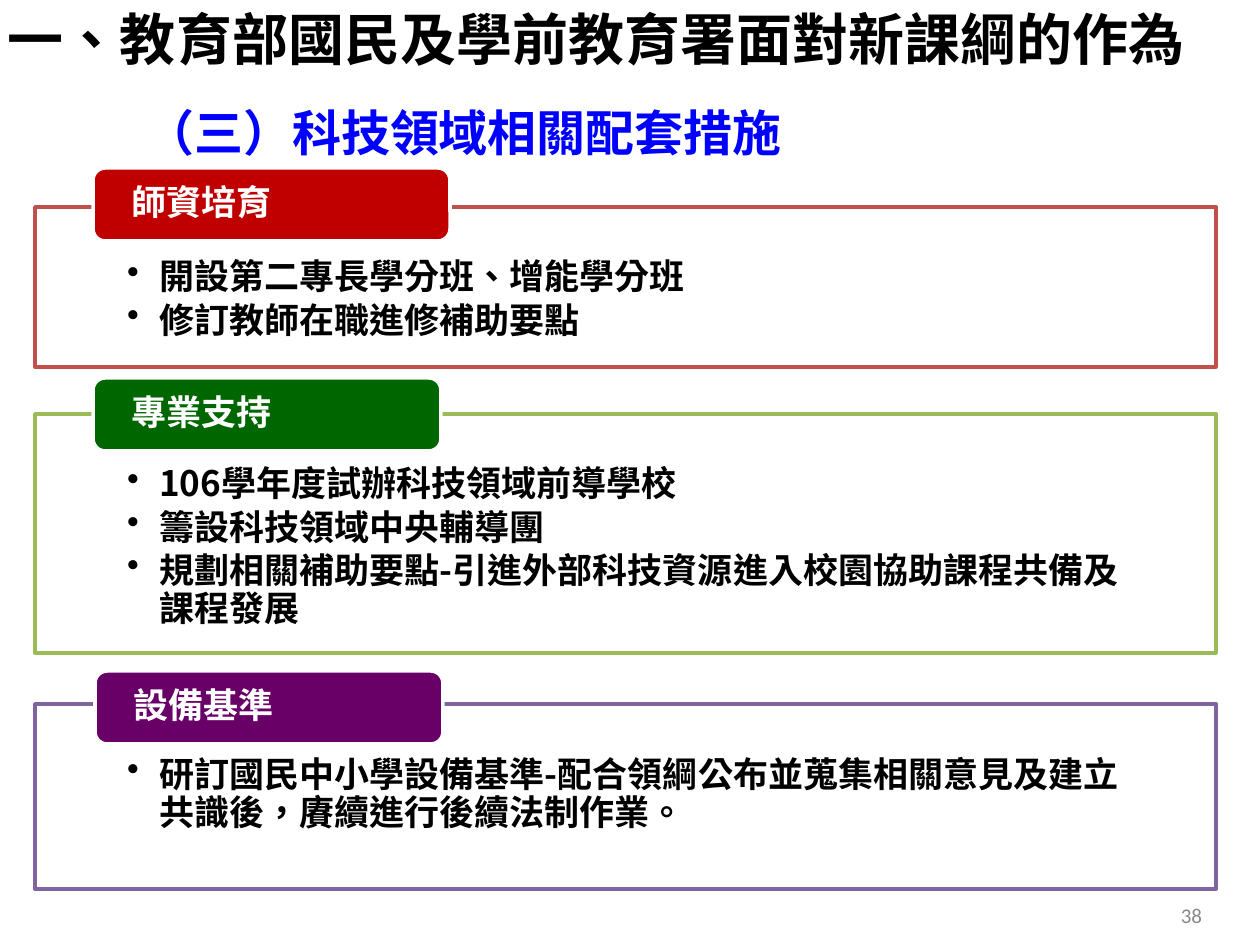
from pptx import Presentation
from pptx.dml.color import RGBColor
from pptx.enum.shapes import MSO_SHAPE as SHAPE
from pptx.enum.text import MSO_ANCHOR as ANCHOR, PP_ALIGN as ALIGN
from pptx.oxml.ns import qn
from pptx.util import Pt
from lxml.etree import SubElement

EMU_PER_PX = 914400 / 126
CJK, LATIN = "Noto Sans CJK SC", "Calibri"

BLACK = RGBColor(0x00, 0x00, 0x00)
WHITE = RGBColor(0xFF, 0xFF, 0xFF)
BLUE = RGBColor(0x00, 0x00, 0xFF)
GRAY = RGBColor(0x89, 0x89, 0x89)
RED, RED_EDGE = RGBColor(0xC0, 0x00, 0x00), RGBColor(0xC0, 0x50, 0x4D)
GREEN, GREEN_EDGE = RGBColor(0x00, 0x66, 0x00), RGBColor(0x9B, 0xBB, 0x59)
PURPLE, PURPLE_EDGE = RGBColor(0x68, 0x00, 0x68), RGBColor(0x80, 0x64, 0xA2)


def px(n):
    return round(n * EMU_PER_PX)


class Deck:
    def __init__(self, width, height):
        self.prs = Presentation()
        self.prs.slide_width, self.prs.slide_height = px(width), px(height)
        self.s = self.prs.slides.add_slide(self.prs.slide_layouts[6])

    def frame(self, sp, insets, anchor, wrap=True):
        tf = sp.text_frame
        tf.word_wrap, tf.vertical_anchor = wrap, anchor
        tf.margin_left, tf.margin_top, tf.margin_right, tf.margin_bottom = map(px, insets)
        return tf

    def run(self, p, text, size, color, font=CJK, bold=True):
        r = p.add_run()
        r.text = text
        r.font.size, r.font.bold, r.font.name = Pt(size), bold, font
        r.font.color.rgb = color
        if font == CJK:
            rPr = r.font._element
            rPr.set("lang", "zh-TW")
            SubElement(rPr, qn("a:ea")).set("typeface", font)

    def shape(self, kind, box, fill, line=None):
        sp = self.s.shapes.add_shape(kind, *map(px, box))
        sp.shadow.inherit = False
        sp.fill.solid()
        sp.fill.fore_color.rgb = fill
        if line is None:
            sp.line.fill.background()
        else:
            sp.line.color.rgb, sp.line.width = line, Pt(2)
        return sp

    def text(self, box, text, size, color, align, wrap=True, **style):
        sp = self.s.shapes.add_textbox(*map(px, box))
        p = self.frame(sp, (13, 6, 13, 6), ANCHOR.MIDDLE, wrap).paragraphs[0]
        p.alignment = align
        self.run(p, text, size, color, **style)

    def title(self, box, text):
        sp = self.shape(SHAPE.RECTANGLE, box, WHITE)
        p = self.frame(sp, (13, 0, 13, 26), ANCHOR.MIDDLE).paragraphs[0]
        p.alignment = ALIGN.LEFT
        self.run(p, text, 32, BLACK)

    def bullet(self, p, text):
        pPr = p._p.get_or_add_pPr()
        pPr.set("marL", str(px(32)))
        pPr.set("indent", str(-px(32)))
        SubElement(pPr, qn("a:buChar")).set("char", "•")
        p.alignment = ALIGN.LEFT
        p.line_spacing, p.space_after = Pt(21.7), Pt(3)
        self.run(p, text, 20, BLACK)

    def panel(self, top, height, edge, items):
        sp = self.shape(SHAPE.RECTANGLE, (35, top, 1181, height), WHITE, edge)
        color = sp.fill._xPr.find(qn("a:solidFill"))[0]
        SubElement(color, qn("a:alpha")).set("val", "90000")
        tf = self.frame(sp, (92, 52, 92, 20), ANCHOR.TOP)
        for i, item in enumerate(items):
            self.bullet(tf.add_paragraph() if i else tf.paragraphs[0], item)

    def tag(self, left, top, width, fill, text):
        sp = self.shape(SHAPE.ROUNDED_RECTANGLE, (left, top, width, 73), fill, WHITE)
        p = self.frame(sp, (35, 0, 35, 0), ANCHOR.MIDDLE).paragraphs[0]
        p.alignment, p.line_spacing = ALIGN.LEFT, 0.9
        self.run(p, text, 20, WHITE)


# panel top, height, edge; tag left, top, width, fill; heading; bullets
SECTIONS = [
    (207, 160, RED_EDGE, 93, 168, 357, RED, "師資培育",
     ["開設第二專長學分班、增能學分班", "修訂教師在職進修補助要點"]),
    (414, 239, GREEN_EDGE, 93, 378, 348, GREEN, "專業支持",
     ["106學年度試辦科技領域前導學校", "籌設科技領域中央輔導團",
      "規劃相關補助要點-引進外部科技資源進入校園協助課程共備及課程發展"]),
    (704, 185, PURPLE_EDGE, 95, 671, 348, PURPLE, "設備基準",
     ["研訂國民中小學設備基準-配合領綱公布並蒐集相關意見及建立共識後，賡續進行後續法制作業。"]),
]


def main():
    deck = Deck(1260, 945)

    # Title and subtitle
    deck.title((-5, 0, 1265, 102), "一、教育部國民及學前教育署面對新課綱的作為")
    deck.text((129, 96, 669, 72), "（三）科技領域相關配套措施", 28, BLUE,
              ALIGN.CENTER, wrap=False)

    # Framed sections with their tags
    for top, height, edge, left, tag_top, width, fill, heading, items in SECTIONS:
        deck.panel(top, height, edge, items)
        deck.tag(left, tag_top, width, fill, heading)

    # Slide number
    deck.text((921, 890, 294, 50), "38", 12, GRAY, ALIGN.RIGHT, font=LATIN, bold=False)

    deck.prs.save("out.pptx")


if __name__ == "__main__":
    main()
